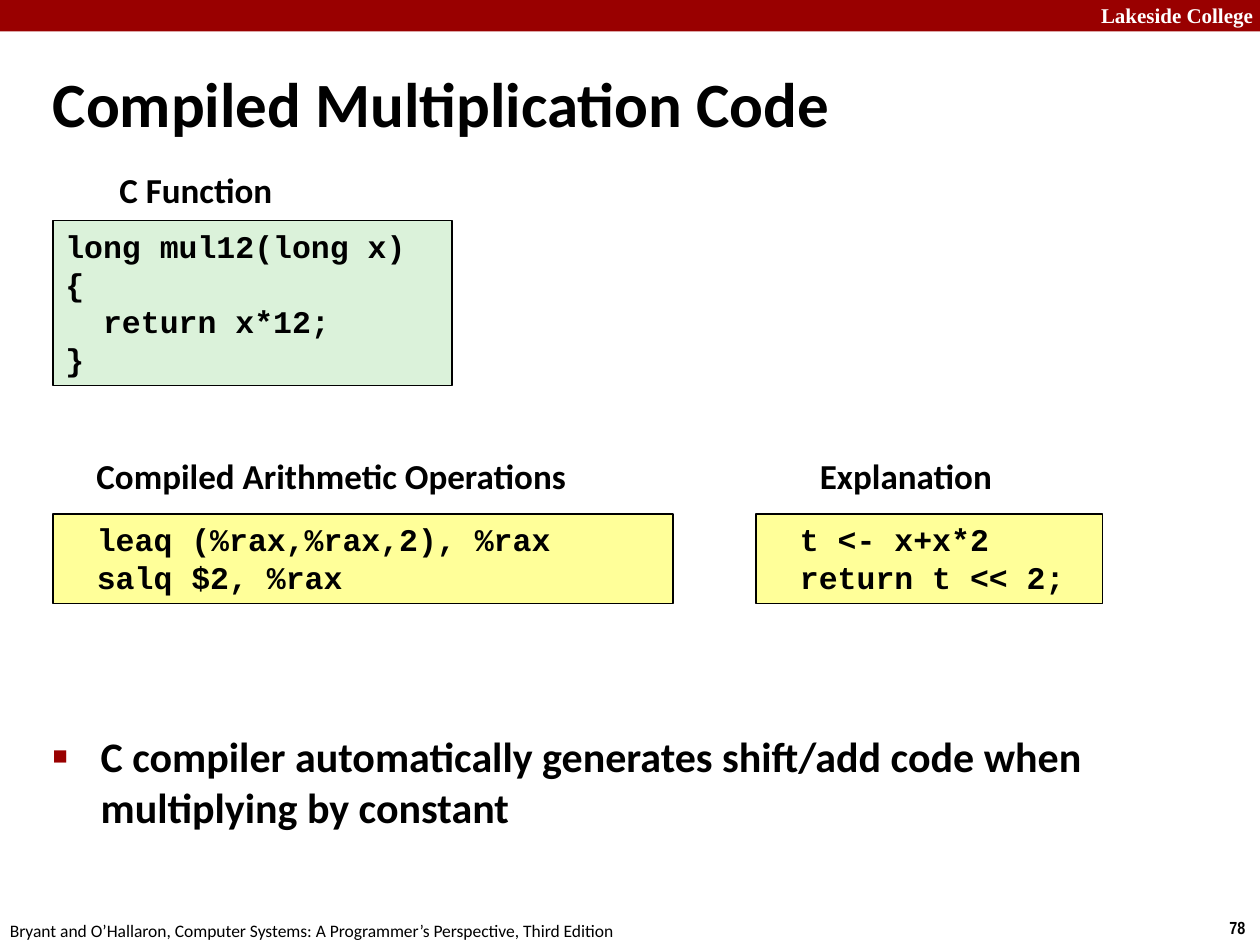
"""Build a slide on how a compiler turns multiplication into shifts and adds."""
from dataclasses import dataclass

from lxml import etree
from pptx import Presentation
from pptx import util as u
from pptx.dml.color import RGBColor
from pptx.enum import shapes, text
from pptx.oxml import ns


@dataclass(frozen=True)
class Theme:
    red: str = "990000"
    black: str = "000000"
    white: str = "FFFFFF"
    green: str = "DBF2DA"
    yellow: str = "FFFF99"
    sans: str = "Calibri"
    narrow: str = "Arial Narrow"
    serif: str = "Times New Roman"
    mono: str = "Courier New"
    title: int = 36
    body: int = 24
    label: int = 20
    code: int = 18
    header: int = 12
    footer: int = 10


THEME = Theme()


def place(left, top, width, height):
    return [u.Inches(value) for value in (left, top, width, height)]


def write(shape, lines, size, name=THEME.sans, color=THEME.black, bold=True,
          align=text.PP_ALIGN.LEFT, wrap=True, anchor=text.MSO_ANCHOR.TOP):
    frame = shape.text_frame
    frame.word_wrap = wrap
    frame.vertical_anchor = anchor
    frame.text = "\n".join(lines)
    for paragraph in frame.paragraphs:
        paragraph.alignment = align
        font = paragraph.font
        font.name, font.size, font.bold = name, u.Pt(size), bold
        font.color.rgb = RGBColor.from_string(color)
    return frame


def add_text(slide, box, line, size, **style):
    return write(slide.shapes.add_textbox(*place(*box)), [line], size, **style)


def add_rectangle(slide, box, fill, line=None):
    shape = slide.shapes.add_shape(shapes.MSO_SHAPE.RECTANGLE, *place(*box))
    shape.shadow.inherit = False
    shape.fill.solid()
    shape.fill.fore_color.rgb = RGBColor.from_string(fill)
    if line:
        shape.line.color.rgb = RGBColor.from_string(line)
        shape.line.width = u.Pt(1)
    else:
        shape.line.fill.background()
    return shape


def add_property(parent, tag, **attributes):
    return etree.SubElement(parent, ns.qn(tag), attributes)


def add_code(slide, box, fill, lines, tab=None):
    shape = add_rectangle(slide, box, fill, THEME.black)
    frame = write(shape, lines, THEME.code, name=THEME.mono)
    if tab:
        for paragraph in frame.paragraphs:
            properties = paragraph._p.get_or_add_pPr()
            tabs = etree.Element(ns.qn("a:tabLst"))
            add_property(tabs, "a:tab", pos=str(u.Inches(tab)), algn="l")
            properties.find(ns.qn("a:defRPr")).addprevious(tabs)


def add_label(slide, box, line):
    frame = add_text(slide, box, line, THEME.label,
                     align=text.PP_ALIGN.CENTER, wrap=False)
    frame.margin_left = frame.margin_right = u.Inches(0.05)
    frame.margin_top = frame.margin_bottom = u.Inches(0.05)


def add_bullet(slide, box, line):
    paragraph = add_text(slide, box, line, THEME.body).paragraphs[0]
    paragraph.space_before = u.Pt(THEME.body * 0.2)
    properties = paragraph._p.get_or_add_pPr()
    indent = u.Inches(0.38)
    properties.set("marL", str(indent))
    properties.set("indent", str(-indent))
    bullet = etree.Element(ns.qn("a:bullet"))
    add_property(add_property(bullet, "a:buClr"), "a:srgbClr", val=THEME.red)
    add_property(bullet, "a:buSzPct", val="60000")
    add_property(bullet, "a:buFont", typeface="Arial")
    add_property(bullet, "a:buChar", char="■")
    defaults = properties.find(ns.qn("a:defRPr"))
    for part in list(bullet):
        defaults.addprevious(part)


def add_frame(slide):
    add_rectangle(slide, (0, 0, 10, 0.25), THEME.red)
    add_text(slide, (8.64, -0.03, 1.43, 0.3), "Lakeside College", THEME.header,
             name=THEME.serif, color=THEME.white)
    add_text(slide, (9.66, 7.23, 0.34, 0.27), "78", THEME.footer,
             name=THEME.narrow, wrap=False)
    add_text(slide, (-0.02, 7.25, 5.08, 0.27),
             "Bryant and O’Hallaron, Computer Systems: "
             "A Programmer’s Perspective, Third Edition",
             THEME.footer, bold=False, wrap=False)


def main():
    presentation = Presentation()
    presentation.slide_width = u.Inches(10)
    presentation.slide_height = u.Inches(7.5)
    slide = presentation.slides.add_slide(presentation.slide_layouts[6])

    add_frame(slide)
    add_text(slide, (0.32, 0.5, 7.84, 0.63), "Compiled Multiplication Code",
             THEME.title, anchor=text.MSO_ANCHOR.MIDDLE)

    add_label(slide, (0.89, 1.29, 1.33, 0.44), "C Function")
    add_code(slide, (0.42, 1.75, 3.17, 1.31), THEME.green,
             ["long mul12(long x)", "{", "  return x*12;", "}"])

    add_label(slide, (0.7, 3.56, 3.86, 0.44), "Compiled Arithmetic Operations")
    add_code(slide, (0.42, 4.08, 4.92, 0.71), THEME.yellow,
             ["\tleaq\t(%rax,%rax,2), %rax", "\tsalq\t$2, %rax"], tab=0.25)

    add_label(slide, (6.45, 3.56, 1.48, 0.44), "Explanation")
    add_code(slide, (6, 4.08, 2.75, 0.71), THEME.yellow,
             ["\tt <- x+x*2", "\treturn t << 2;"], tab=0.25)

    add_bullet(slide, (0.32, 5.75, 9.09, 1.3),
               "C compiler automatically generates shift/add code "
               "when multiplying by constant")
    presentation.save("out.pptx")


if __name__ == "__main__":
    main()
